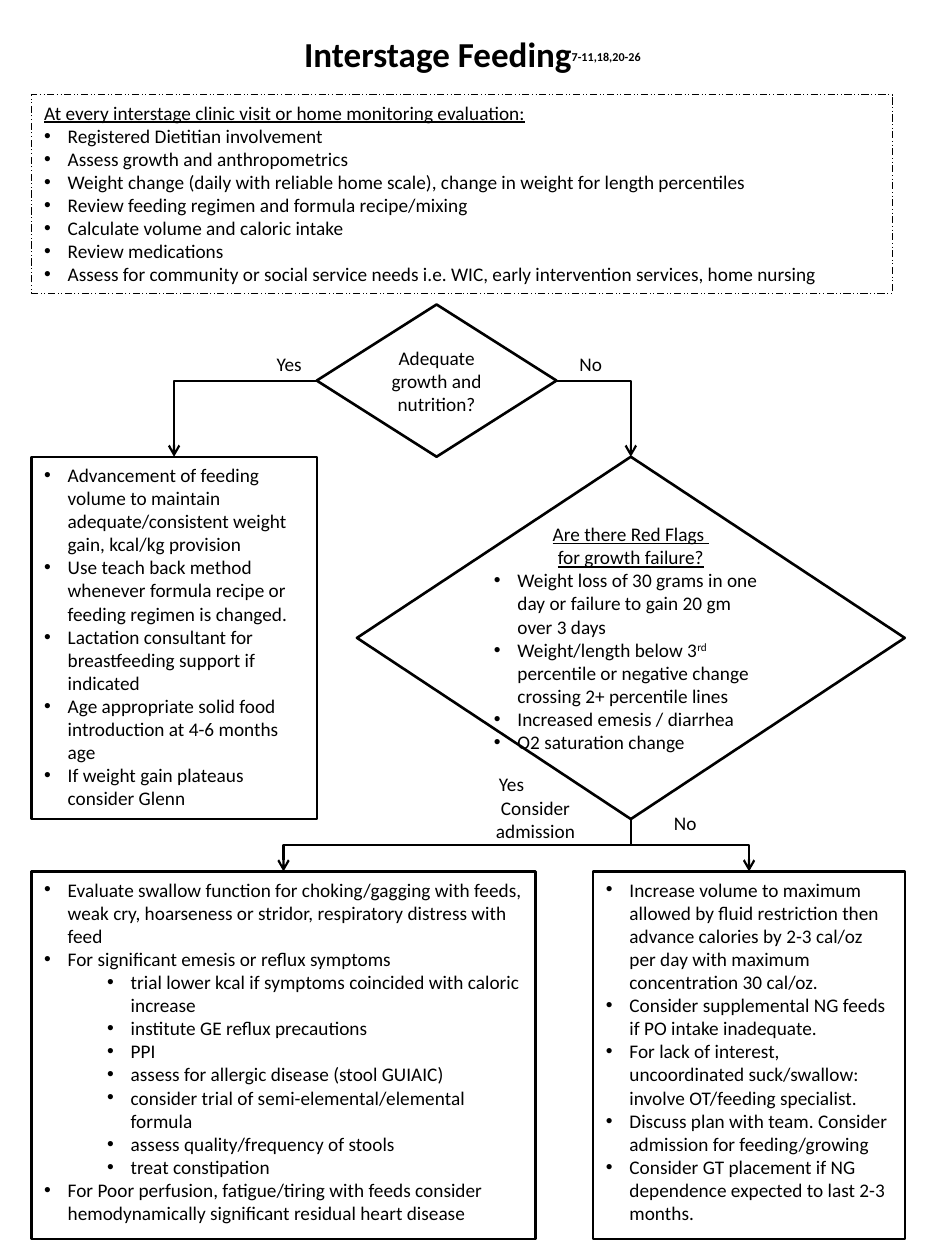
import pptx
import pptx.util
import pptx.dml.color
import pptx.enum.dml
import pptx.enum.shapes
import pptx.enum.text
import lxml.etree

Pt = pptx.util.Pt
RGB = pptx.dml.color.RGBColor
Align = pptx.enum.text.PP_ALIGN
Anchor = pptx.enum.text.MSO_ANCHOR
Kind = pptx.enum.shapes.MSO_SHAPE
NS = "{http://schemas.openxmlformats.org/drawingml/2006/main}"

theme = {
    "font": "Calibri",
    "ink": RGB(0, 0, 0),
    "paper": RGB(255, 255, 255),
    "title": 20,
    "note": 12,
    "text": 11,
}


def write(frame, lines, size=theme["text"], bold=False):
    """Fill a frame with (style, text) lines; text between ^ marks is raised."""
    frame.word_wrap = True
    frame.auto_size = pptx.enum.text.MSO_AUTO_SIZE.NONE
    for i, (style, text) in enumerate(lines):
        para = frame.paragraphs[0] if i == 0 else frame.add_paragraph()
        para.alignment = Align.CENTER if "center" in style else Align.LEFT
        para.line_spacing = 1.0
        para.space_before = para.space_after = Pt(0)
        props = para._p.get_or_add_pPr()
        left, hang = {"item": (13.5, -13.5), "sub": (49.5, -13.5), "shift": (20, 0)}.get(style, (0, 0))
        para.level = 1 if style == "sub" else 0
        props.set("marL", str(Pt(left)))
        props.set("indent", str(Pt(hang)))
        if hang:
            lxml.etree.SubElement(props, NS + "buFont", typeface="Arial")
            lxml.etree.SubElement(props, NS + "buChar", char="•")
        else:
            lxml.etree.SubElement(props, NS + "buNone")
        font = para.font
        font.name, font.size, font.bold = theme["font"], Pt(size), bold
        font.underline = "head" in style
        font.color.rgb = theme["ink"]
        for j, part in enumerate(text.split("^")):
            if part:
                run = para.add_run()
                run.text = part
                if j % 2:
                    run._r.get_or_add_rPr().set("baseline", "30000")


def ink(line, width):
    line.color.rgb = theme["ink"]
    line.width = Pt(width)


deck = pptx.Presentation()
deck.slide_width, deck.slide_height = Pt(540), Pt(720)
slide = deck.slides.add_slide(deck.slide_layouts[4])
shapes = slide.shapes

# Title
title = shapes.title
title.left, title.top, title.width, title.height = Pt(27), Pt(6), Pt(486), Pt(49)
write(title.text_frame, [("center", "Interstage Feeding^7-11,18,20-26")], theme["title"], True)
title.text_frame.vertical_anchor = Anchor.MIDDLE
title.text_frame.paragraphs[0].runs[1].font.size = Pt(theme["note"])

# Lists in frames
visit = [
    ("head", "At every interstage clinic visit or home monitoring evaluation:"),
    ("item", "Registered Dietitian involvement"),
    ("item", "Assess growth and anthropometrics"),
    ("item", "Weight change (daily with reliable home scale), change in weight for length percentiles"),
    ("item", "Review feeding regimen and formula recipe/mixing"),
    ("item", "Calculate volume and caloric intake"),
    ("item", "Review medications"),
    ("item", "Assess for community or social service needs i.e. WIC, early intervention services, home nursing"),
]
advance = [
    ("item", "Advancement of feeding volume to maintain adequate/consistent weight gain, kcal/kg provision"),
    ("item", "Use teach back method whenever formula recipe or feeding regimen is changed."),
    ("item", "Lactation consultant for breastfeeding support if indicated"),
    ("item", "Age appropriate solid food introduction at 4-6 months age"),
    ("item", "If weight gain plateaus consider Glenn"),
]
admit = [
    ("item", "Evaluate swallow function for choking/gagging with feeds, weak cry, hoarseness or stridor, "
             "respiratory distress with feed"),
    ("item", "For significant emesis or reflux symptoms"),
    ("sub", "trial lower kcal if symptoms coincided with caloric increase"),
    ("sub", "institute GE reflux precautions"),
    ("sub", "PPI"),
    ("sub", "assess for allergic disease (stool GUIAIC)"),
    ("sub", "consider trial of semi-elemental/elemental formula"),
    ("sub", "assess quality/frequency of stools"),
    ("sub", "treat constipation"),
    ("item", "For Poor perfusion, fatigue/tiring with feeds consider hemodynamically significant "
             "residual heart disease"),
]
boost = [
    ("item", "Increase volume to maximum allowed by fluid restriction then advance calories by 2-3 cal/oz "
             "per day with maximum concentration 30 cal/oz."),
    ("item", "Consider supplemental NG feeds if PO intake inadequate."),
    ("item", "For lack of interest, uncoordinated suck/swallow: involve OT/feeding specialist."),
    ("item", "Discuss plan with team. Consider admission for feeding/growing"),
    ("item", "Consider GT placement if NG dependence expected to last 2-3 months."),
]
for slot, lines, x, y, w, h, width in [
    (1, visit, 18, 54, 492, 113.5, 0.5),
    (2, advance, 18, 261, 163, 207, 1.25),
    (3, admit, 18, 498, 288, 210, 1.25),
    (4, boost, 339, 498, 178, 210, 1.25),
]:
    box = slide.placeholders[slot]
    box.left, box.top, box.width, box.height = Pt(x), Pt(y), Pt(w), Pt(h)
    box.fill.solid()
    box.fill.fore_color.rgb = theme["paper"]
    ink(box.line, width)
    if lines is visit:
        box.line.dash_style = pptx.enum.dml.MSO_LINE.DASH_DOT_DOT
    write(box.text_frame, lines)
    box.text_frame.vertical_anchor = Anchor.TOP

# Branch labels
for lines, x, y, w, h in [
    ([("plain", "Yes")], 151, 198, 30, 18),
    ([("plain", "No")], 324, 198, 37, 18),
    ([("shift", "Yes"), ("center", "Consider admission")], 258, 438, 96, 34),
    ([("plain", "No")], 378, 460, 31, 18),
]:
    label = shapes.add_textbox(Pt(x), Pt(y), Pt(w), Pt(h))
    label.fill.solid()
    label.fill.fore_color.rgb = theme["paper"]
    write(label.text_frame, lines)

# Decisions
flags = [
    ("center head", "Are there Red Flags "),
    ("center head", "for growth failure?"),
    ("item", "Weight loss of 30 grams in one day or failure to gain 20 gm over 3 days"),
    ("item", "Weight/length below 3^rd ^percentile or negative change crossing 2+ percentile lines"),
    ("item", "Increased emesis / diarrhea"),
    ("item", "O2 saturation change"),
]
for lines, x, y, w, h, pad in [
    ([("center", "Adequate growth and nutrition?")], 181, 174, 137, 87, 3.6),
    (flags, 204, 261, 313, 207, 0),
]:
    gem = shapes.add_shape(Kind.DIAMOND, Pt(x), Pt(y), Pt(w), Pt(h))
    gem.shadow.inherit = False
    gem.fill.background()
    ink(gem.line, 1.5)
    frame = gem.text_frame
    frame.margin_left = frame.margin_right = Pt(0)
    frame.margin_top = frame.margin_bottom = Pt(pad)
    frame.vertical_anchor = Anchor.MIDDLE
    write(frame, lines)

# Elbow arrows: one bend from a side corner, two bends from the bottom corner
for x1, y1, x2, y2, bends in [
    (181, 217.5, 99.5, 261, 1),
    (318, 217.5, 360.5, 261, 1),
    (360.5, 468, 162, 498, 2),
    (360.5, 468, 428, 498, 2),
]:
    turn = 0
    if bends == 2:
        # A quarter turn about the centre makes the arrow leave downwards
        midx, midy = (x1 + x2) / 2, (y1 + y2) / 2
        halfw, halfh = (y2 - y1) / 2, abs(x2 - x1) / 2
        side = 1 if x2 < x1 else -1
        turn = 90 if side == 1 else 270
        x1, x2 = midx - side * halfw, midx + side * halfw
        y1, y2 = midy - halfh, midy + halfh
    arrow = shapes.add_connector(pptx.enum.shapes.MSO_CONNECTOR.ELBOW, Pt(x1), Pt(y1), Pt(x2), Pt(y2))
    ink(arrow.line, 1.25)
    props = arrow._element.spPr
    props.find(NS + "prstGeom").set("prst", f"bentConnector{bends + 1}")
    if turn:
        props.find(NS + "xfrm").set("rot", str(turn * 60000))
    lxml.etree.SubElement(props.find(NS + "ln"), NS + "tailEnd", type="arrow")
    lxml.etree.SubElement(props, NS + "effectLst")

deck.save("out.pptx")
